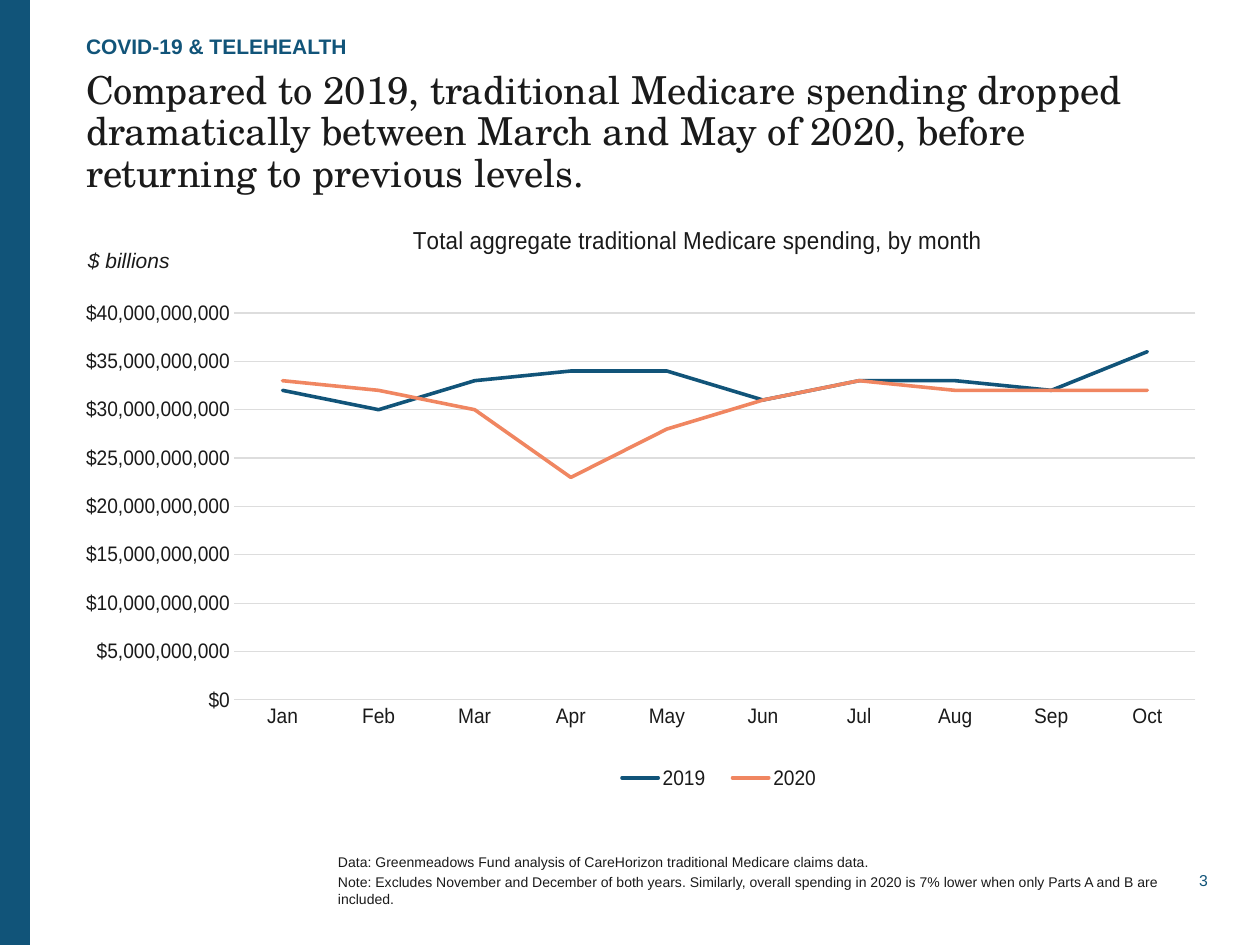
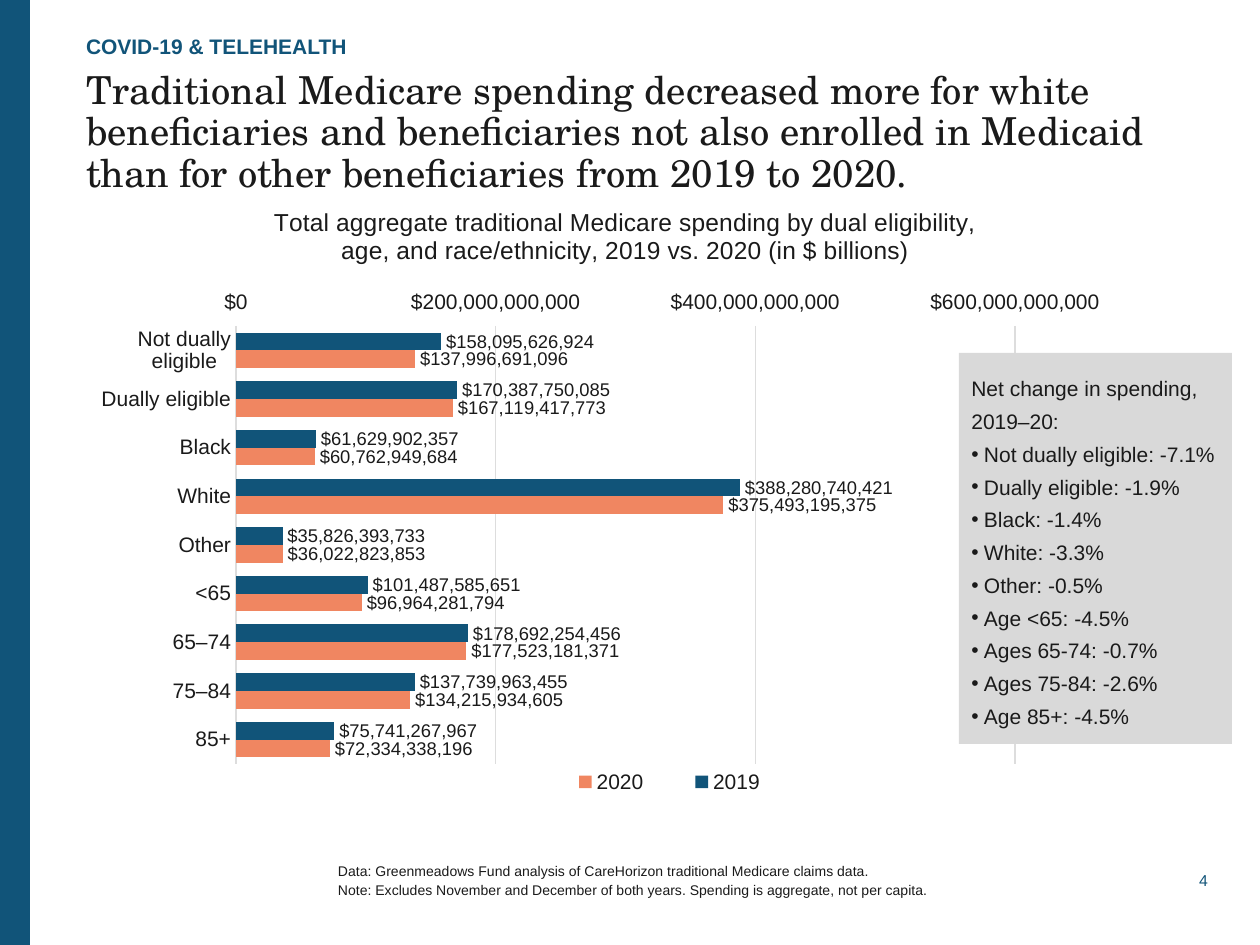
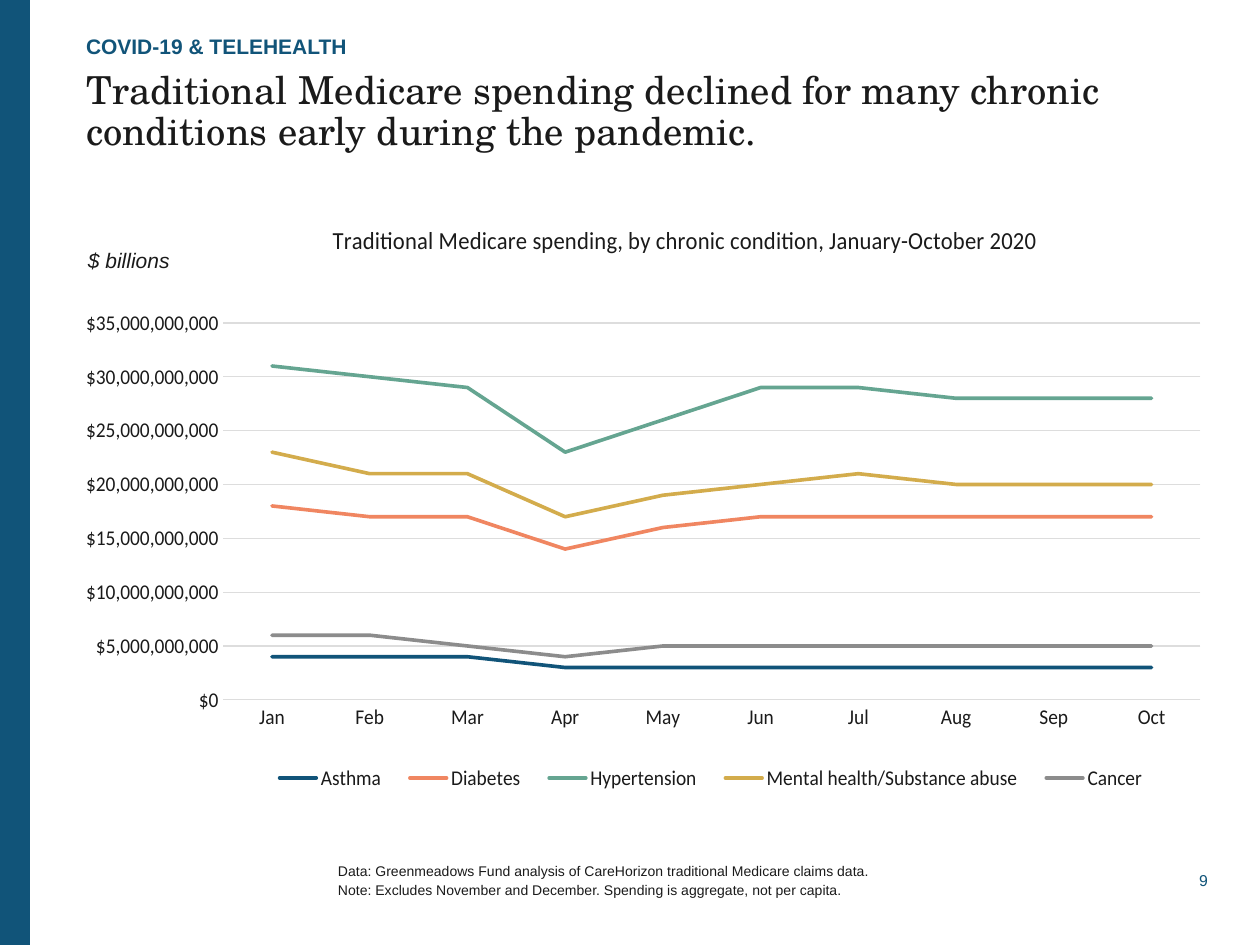
import pptx
import pptx.util
import pptx.chart.data
import pptx.dml.color
import pptx.enum.chart
import pptx.enum.shapes
import pptx.enum.text
import pptx.oxml
import pptx.oxml.ns

# ---- Content (places inside a chart are px from its corner) ----
SECTION = "COVID-19 & TELEHEALTH"
SOURCE = "Data: Greenmeadows Fund analysis of CareHorizon traditional Medicare claims data."
MONTHS = ["Jan", "Feb", "Mar", "Apr", "May", "Jun", "Jul", "Aug", "Sep", "Oct"]
BILLION = 10 ** 9

SLIDES = [
    dict(
        page="3",
        title="Compared to 2019, traditional Medicare spending dropped dramatically "
              "between March and May of 2020, before returning to previous levels.",
        note="Note: Excludes November and December of both years. Similarly, overall spending "
             "in 2020 is 7% lower when only Parts A and B are included.",
        unit="$ billions",
        chart=dict(
            kind="LINE", font="Arial", top=200, cats=MONTHS, scale=BILLION,
            axis_max=40, step=5,
            title=["Total aggregate traditional Medicare spending, by month"],
            title_at=(247, 20), plot_at=(56, 113, 1053, 387), legend_at=(458, 560, 258, 36),
            series=[
                ("2019", "blue", [32, 30, 33, 34, 34, 31, 33, 33, 32, 36]),
                ("2020", "coral", [33, 32, 30, 23, 28, 31, 33, 32, 32, 32]),
            ]),
    ),
    dict(
        page="4",
        title="Traditional Medicare spending decreased more for white beneficiaries and "
              "beneficiaries not also enrolled in Medicaid than for other beneficiaries "
              "from 2019 to 2020.",
        note="Note: Excludes November and December of both years. Spending is aggregate, "
             "not per capita.",
        chart=dict(
            kind="BAR_CLUSTERED", font="Arial", top=201, scale=1,
            axis_max=600 * BILLION, step=200 * BILLION,
            cats=["Not dually eligible", "Dually eligible", "Black", "White", "Other",
                  "<65", "65–74", "75–84", "85+"],
            title=["Total aggregate traditional Medicare spending by dual eligibility,",
                   "age, and race/ethnicity, 2019 vs. 2020 (in $ billions)"],
            title_at=(184, 2), plot_at=(150, 125, 779, 438), legend_at=(448, 563, 271, 36),
            series=[
                ("2019", "blue", [158095626924, 170387750085, 61629902357, 388280740421,
                                  35826393733, 101487585651, 178692254456, 137739963455,
                                  75741267967]),
                ("2020", "coral", [137996691096, 167119417773, 60762949684, 375493195375,
                                   36022823853, 96964281794, 177523181371, 134215934605,
                                   72334338196]),
            ]),
        changes=("Net change in spending, 2019–20:",
                 ["Not dually eligible: -7.1%", "Dually eligible: -1.9%", "Black: -1.4%",
                  "White: -3.3%", "Other: -0.5%", "Age <65: -4.5%", "Ages 65-74: -0.7%",
                  "Ages 75-84: -2.6%", "Age 85+: -4.5%"]),
    ),
    dict(
        page="9",
        title="Traditional Medicare spending declined for many chronic conditions early "
              "during the pandemic.",
        note="Note: Excludes November and December. Spending is aggregate, not per capita.",
        unit="$ billions",
        chart=dict(
            kind="LINE", font="Calibri", top=200, cats=MONTHS, scale=BILLION,
            axis_max=35, step=5,
            title=["Traditional Medicare spending, by chronic condition, January-October 2020"],
            title_at=(171, 19), plot_at=(57, 123, 1058, 377), legend_at=(94, 560, 982, 36),
            series=[
                ("Asthma", "blue", [4, 4, 4, 3, 3, 3, 3, 3, 3, 3]),
                ("Diabetes", "coral", [18, 17, 17, 14, 16, 17, 17, 17, 17, 17]),
                ("Hypertension", "green", [31, 30, 29, 23, 26, 29, 29, 28, 28, 28]),
                ("Mental health/Substance abuse", "gold",
                 [23, 21, 21, 17, 19, 20, 21, 20, 20, 20]),
                ("Cancer", "gray", [6, 6, 5, 4, 5, 5, 5, 5, 5, 5]),
            ]),
    ),
]

# ---- Shared look ----
COLORS = dict(blue="115479", coral="F08661", green="65A591", gold="D3AC4C", gray="8C8C8C",
              ink="1A1A1A", grid="DDDDDD", panel="D9D9D9")
PX = 914400 / 126
DOLLARS = '"$"#,##0'
PLACES = dict(band=(0, 0, 30, 945), page=(1169, 866, 39, 28), notes=(338, 827, 830, 107),
              title=(86, 71, 1115, 101), section=(86, 25, 1091, 34),
              unit=(88, 248, 252, 32), changes=(959, 353, 273, 391))
CHART_LEFT, CHART_W, CHART_H = 86, 1115, 607

Pt = pptx.util.Pt
XL = pptx.enum.chart
ANCHOR = pptx.enum.text.MSO_ANCHOR
ALIGN = pptx.enum.text.PP_ALIGN
RECT = pptx.enum.shapes.MSO_SHAPE.RECTANGLE


def emu(*lengths):
    return [round(n * PX) for n in lengths]


def rgb(name):
    return pptx.dml.color.RGBColor.from_string(COLORS[name])


def put(obj, **values):
    for name, value in values.items():
        setattr(obj, name, value)


def set_font(font, size, name="Arial", color="ink", **values):
    put(font, size=Pt(size), name=name, **values)
    font.color.rgb = rgb(color)


def add_lines(tf, lines, size, **font):
    """Fill a text frame with one paragraph per line."""
    for i, line in enumerate(lines):
        p = tf.paragraphs[0] if i == 0 else tf.add_paragraph()
        r = p.add_run()
        r.text = line
        set_font(r.font, size, **font)


def write(tf, lines, size, anchor=ANCHOR.TOP, wrap=True, margin=0, para=None, **font):
    put(tf, word_wrap=wrap, vertical_anchor=anchor, auto_size=pptx.enum.text.MSO_AUTO_SIZE.NONE,
        margin_left=margin, margin_right=margin, margin_top=margin // 2, margin_bottom=margin // 2)
    add_lines(tf, lines, size, **font)
    for p in tf.paragraphs:
        put(p, **{"alignment": ALIGN.LEFT, **(para or {})})


def add_text(s, place, lines, size, **options):
    box = s.shapes.add_textbox(*emu(*PLACES[place]))
    write(box.text_frame, lines, size, **options)
    return box.text_frame


def add_rect(s, place, color):
    sp = s.shapes.add_shape(RECT, *emu(*PLACES[place]))
    sp.shadow.inherit = False
    sp.fill.solid()
    sp.fill.fore_color.rgb = rgb(color)
    sp.line.fill.background()
    return sp


def place_part(element, index, box, inner=False):
    """Give a chart part a fixed place, turned into fractions of the chart."""
    for old in element.findall(pptx.oxml.ns.qn("c:layout")):
        element.remove(old)
    parts = [("layoutTarget", "inner")] if inner else []
    parts += [("xMode", "edge"), ("yMode", "edge")]
    parts += [(tag, n / size) for tag, n, size in zip("xywh", box, (CHART_W, CHART_H) * 2)]
    body = "".join(f'<c:{tag} val="{val}"/>' for tag, val in parts)
    element.insert(index, pptx.oxml.parse_xml(
        f'<c:layout {pptx.oxml.ns.nsdecls("c")}><c:manualLayout>{body}</c:manualLayout></c:layout>'))


def style_line(line, color, width):
    line.color.rgb = rgb(color)
    line.width = Pt(width)


def add_chart(s, c):
    data = pptx.chart.data.CategoryChartData(number_format=DOLLARS)
    data.categories = c["cats"]
    for name, _, values in c["series"]:
        data.add_series(name, [v * c["scale"] for v in values])
    chart = s.shapes.add_chart(XL.XL_CHART_TYPE[c["kind"]],
                               *emu(CHART_LEFT, c["top"], CHART_W, CHART_H), data).chart
    is_bar = c["kind"] == "BAR_CLUSTERED"
    set_font(chart.font, 10, c["font"])

    # Title, legend and plot area
    put(chart, has_title=True, has_legend=True)
    add_lines(chart.chart_title.text_frame, c["title"], 14, name=c["font"], bold=False)
    put(chart.legend, position=XL.XL_LEGEND_POSITION.BOTTOM, include_in_layout=False)
    set_font(chart.legend.font, 12, c["font"])
    plot = chart.plots[0]
    place_part(chart.chart_title._element, 1, c["title_at"])
    place_part(chart.legend._element, 1, c["legend_at"])
    place_part(plot._element.getparent(), 0, c["plot_at"], inner=True)

    # Axes
    cat, val = chart.category_axis, chart.value_axis
    for axis in (cat, val):
        put(axis, major_tick_mark=XL.XL_TICK_MARK.NONE, minor_tick_mark=XL.XL_TICK_MARK.NONE)
        set_font(axis.tick_labels.font, 12, c["font"])
    style_line(cat.format.line, "grid", 0.75)
    cat.reverse_order = is_bar
    put(val, minimum_scale=0, maximum_scale=c["axis_max"] * c["scale"],
        major_unit=c["step"] * c["scale"], has_major_gridlines=True)
    style_line(val.major_gridlines.format.line, "grid", 0.75)
    val.format.line.fill.background()
    put(val.tick_labels, number_format=DOLLARS, number_format_is_linked=False)

    # Series
    plot.vary_by_categories = False
    if is_bar:
        put(plot, gap_width=75, overlap=0)
        val.tick_label_position = XL.XL_TICK_LABEL_POSITION.LOW
    for ser, (_, color, _) in zip(plot.series, c["series"]):
        if is_bar:
            ser.format.fill.solid()
            ser.format.fill.fore_color.rgb = rgb(color)
            put(ser.data_labels, show_value=True, number_format=DOLLARS,
                number_format_is_linked=False, position=XL.XL_LABEL_POSITION.OUTSIDE_END)
            set_font(ser.data_labels.font, 10.5, c["font"])
        else:
            ser.smooth = False
            style_line(ser.format.line, color, 2.25)
            ser._element.spPr.find(pptx.oxml.ns.qn("a:ln")).set("cap", "rnd")


def add_changes(s, heading, items):
    tf = add_rect(s, "changes", "panel").text_frame
    write(tf, [heading, *items], 12, anchor=ANCHOR.MIDDLE, margin=91440,
          para=dict(line_spacing=1.3))
    for p in tf.paragraphs[1:]:
        pPr = p._p.get_or_add_pPr()
        pPr.set("marL", "91440")
        pPr.set("indent", "-91440")
        for tag in ('buFont typeface="Arial"', 'buChar char="•"'):
            name, attr = tag.split(" ")
            pPr.append(pptx.oxml.parse_xml(
                f'<a:{name} {pptx.oxml.ns.nsdecls("a")} {attr}/>'))


def add_slide(prs, d):
    s = prs.slides.add_slide(prs.slide_layouts[5])
    # Band, page number and notes
    add_rect(s, "band", "blue")
    add_text(s, "page", [d["page"]], 9, anchor=ANCHOR.MIDDLE, wrap=False, color="blue",
             para=dict(alignment=ALIGN.RIGHT))
    notes = add_text(s, "notes", [SOURCE, d["note"]], 8, anchor=ANCHOR.MIDDLE)
    notes.paragraphs[1].space_before = Pt(1.6)
    # Heading
    title = s.shapes.title
    put(title, **dict(zip(("left", "top", "width", "height"), emu(*PLACES["title"]))))
    write(title.text_frame, [d["title"]], 22, name="TeX Gyre Schola",
          para=dict(line_spacing=0.9))
    add_text(s, "section", [SECTION], 12, anchor=ANCHOR.BOTTOM, color="blue", bold=True)
    # Chart and what goes with it
    add_chart(s, d["chart"])
    if "unit" in d:
        add_text(s, "unit", [d["unit"]], 12, italic=True)
    if "changes" in d:
        add_changes(s, *d["changes"])


def main():
    prs = pptx.Presentation()
    put(prs, slide_width=pptx.util.Inches(10), slide_height=pptx.util.Inches(7.5))
    for d in SLIDES:
        add_slide(prs, d)
    prs.save("out.pptx")


if __name__ == "__main__":
    main()
